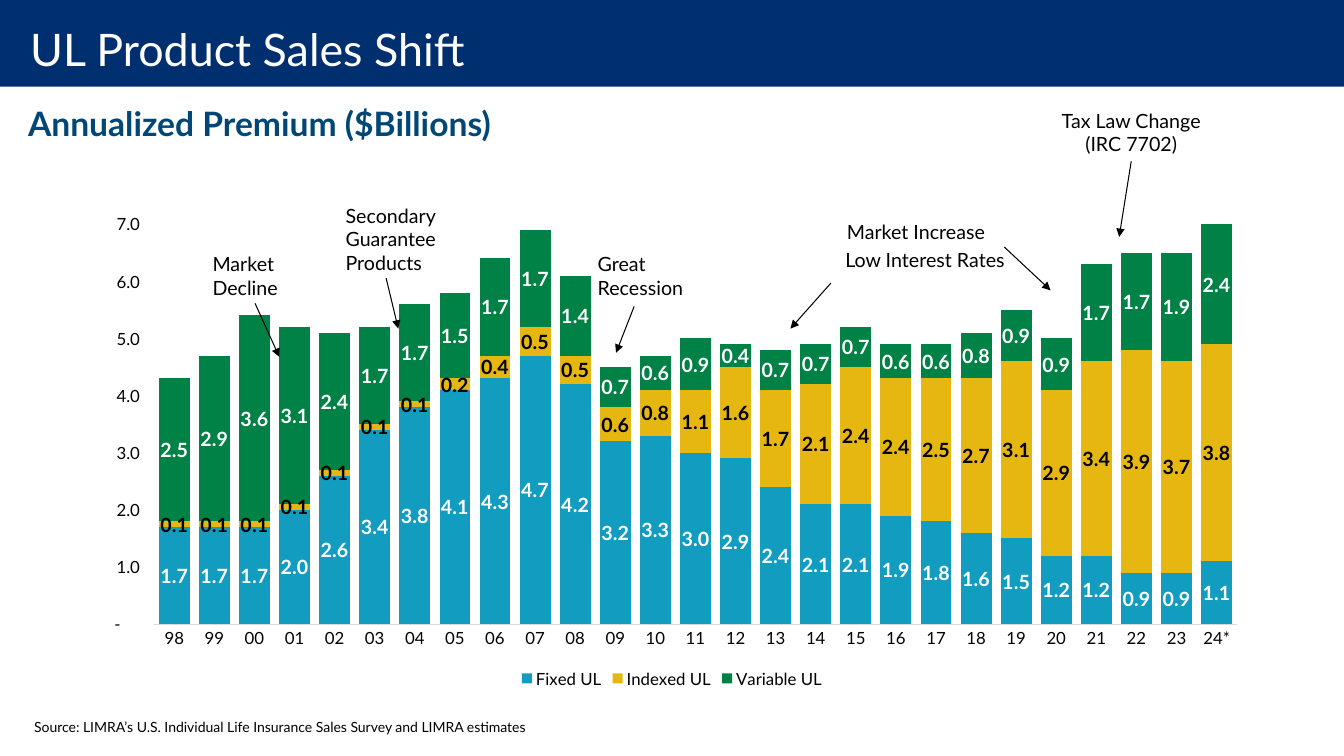
"""Build the UL product sales slide with a stacked column chart and callouts."""
from lxml.etree import SubElement
from pptx import Presentation
from pptx.chart.data import CategoryChartData
from pptx.dml.color import RGBColor
from pptx.enum.chart import XL_CHART_TYPE, XL_LABEL_POSITION, XL_LEGEND_POSITION, XL_TICK_MARK
from pptx.enum.shapes import MSO_CONNECTOR, MSO_SHAPE
from pptx.enum.text import MSO_ANCHOR, MSO_AUTO_SIZE, PP_ALIGN
from pptx.oxml.ns import qn
from pptx.util import Pt

PX = 9144
FONT = "Lato"
COLORS = {
    "band": "002F70", "white": "FFFFFF", "black": "000000", "heading": "004776",
    "axis": "D9D9D9", "fixed": "129DC0", "indexed": "E6B711", "variable": "008145",
}
TITLE = "UL Product Sales Shift"
HEADING = "Annualized Premium ($Billions)"
SOURCE = "Source: LIMRA’s U.S. Individual Life Insurance Sales Survey and LIMRA estimates"
YEARS = [f"{year % 100:02d}" for year in range(1998, 2024)] + ["24*"]
SERIES = [
    ("Fixed UL", "fixed", "white",
     [1.7, 1.7, 1.7, 2.0, 2.6, 3.4, 3.8, 4.1, 4.3, 4.7, 4.2, 3.2, 3.3, 3.0,
      2.9, 2.4, 2.1, 2.1, 1.9, 1.8, 1.6, 1.5, 1.2, 1.2, 0.9, 0.9, 1.1]),
    ("Indexed UL", "indexed", "black",
     [0.1, 0.1, 0.1, 0.1, 0.1, 0.1, 0.1, 0.2, 0.4, 0.5, 0.5, 0.6, 0.8, 1.1,
      1.6, 1.7, 2.1, 2.4, 2.4, 2.5, 2.7, 3.1, 2.9, 3.4, 3.9, 3.7, 3.8]),
    ("Variable UL", "variable", "white",
     [2.5, 2.9, 3.6, 3.1, 2.4, 1.7, 1.7, 1.5, 1.7, 1.7, 1.4, 0.7, 0.6, 0.9,
      0.4, 0.7, 0.7, 0.7, 0.6, 0.6, 0.8, 0.9, 0.9, 1.7, 1.7, 1.9, 2.4]),
]
NUMBER_FORMAT = '_(* #,##0.0_);_(* \\(#,##0.0\\);_(* "-"??_);_(@_)'
CHART_BOX = (83, 203, 1167, 484)
PLOT_LAYOUT = {"x": 0.06, "y": 0.04, "w": 0.92, "h": 0.82}
LEFT, CENTER = PP_ALIGN.LEFT, PP_ALIGN.CENTER
BOTTOM_SITE = 2
CALLOUTS = [
    (["Market Increase"], (807, 213, 203, 34), CENTER, (996, 245), (1042, 288), False),
    (["Low Interest Rates"], (816, 241, 203, 34), CENTER, (824, 281), (784, 326), False),
    (["Great Recession"], (583, 245, 124, 57), LEFT, (629, 304), (611, 350), False),
    (["Secondary Guarantee Products"], (333, 197, 150, 81), LEFT, (383, 276), (395, 326), False),
    (["Market Decline"], (201, 245, 104, 56), LEFT, (253, 301), (277, 354), True),
    (["Tax Law Change", "(IRC 7702)"], (1033, 103, 178, 57), CENTER, (1122, 160), (1110, 235), True),
]


def color(name):
    return RGBColor.from_string(COLORS[name])


def emu(lengths):
    return [length * PX for length in lengths]


def style_font(font, size, name="black", bold=False):
    font.name, font.size, font.bold = FONT, Pt(size), bold
    font.color.rgb = color(name)


def add_text(slide, lines, box, size, name="black", bold=False, align=LEFT):
    textbox = slide.shapes.add_textbox(*emu(box))
    frame = textbox.text_frame
    frame.word_wrap = True
    for index, line in enumerate(lines):
        paragraph = frame.add_paragraph() if index else frame.paragraphs[0]
        paragraph.alignment = align
        run = paragraph.add_run()
        run.text = line
        style_font(run.font, size, name, bold)
    return textbox


def add_arrow(slide, start, end):
    arrow = slide.shapes.add_connector(MSO_CONNECTOR.STRAIGHT, *emu(start + end))
    arrow.line.color.rgb = color("black")
    arrow.line.width = Pt(0.75)
    SubElement(arrow.line._get_or_add_ln(), qn("a:tailEnd"), type="triangle")
    SubElement(arrow.element.spPr, qn("a:effectLst"))
    return arrow


def add_title(slide):
    title = slide.shapes.title
    title.left, title.top, title.width, title.height = emu((0, 0, 1333, 97))
    frame = title.text_frame
    frame.auto_size, frame.word_wrap = MSO_AUTO_SIZE.NONE, False
    frame.vertical_anchor = MSO_ANCHOR.MIDDLE
    frame.margin_left, frame.margin_top, frame.margin_right, frame.margin_bottom = emu((30, 0, 20, 0))
    paragraph = frame.paragraphs[0]
    paragraph.alignment = LEFT
    run = paragraph.add_run()
    run.text = TITLE
    style_font(run.font, 32, "white")
    band = slide.shapes.add_shape(MSO_SHAPE.RECTANGLE, *emu((0, 0, 1333, 86)))
    band.shadow.inherit = False
    band.fill.solid()
    band.fill.fore_color.rgb = color("band")
    band.line.fill.background()
    title.element.addprevious(band.element)


def set_plot_layout(chart):
    plot_area = chart.element.find(".//" + qn("c:plotArea"))
    for old_layout in plot_area.findall(qn("c:layout")):
        plot_area.remove(old_layout)
    layout = SubElement(plot_area, qn("c:layout"))
    plot_area.insert(0, layout)
    manual = SubElement(layout, qn("c:manualLayout"))
    settings = {"layoutTarget": "inner", "xMode": "edge", "yMode": "edge", **PLOT_LAYOUT}
    for tag, value in settings.items():
        SubElement(manual, qn(f"c:{tag}"), val=str(value))


def add_sales_chart(slide):
    sales = CategoryChartData()
    sales.categories = YEARS
    for name, _, _, values in SERIES:
        sales.add_series(name, values)
    chart = slide.shapes.add_chart(XL_CHART_TYPE.COLUMN_STACKED, *emu(CHART_BOX), sales).chart
    chart.has_title = False
    style_font(chart.font, 12)
    chart.has_legend = True
    chart.legend.position = XL_LEGEND_POSITION.BOTTOM
    chart.legend.include_in_layout = False
    style_font(chart.legend.font, 12)

    years, premium = chart.category_axis, chart.value_axis
    years.major_tick_mark = XL_TICK_MARK.NONE
    years.format.line.color.rgb = color("axis")
    years.format.line.width = Pt(0.75)
    premium.minimum_scale, premium.maximum_scale, premium.major_unit = 0, 7, 1
    premium.major_tick_mark = XL_TICK_MARK.OUTSIDE
    premium.has_major_gridlines = False
    premium.format.line.fill.background()
    premium.tick_labels.number_format = NUMBER_FORMAT
    premium.tick_labels.number_format_is_linked = False
    for axis in (years, premium):
        style_font(axis.tick_labels.font, 12)

    plot = chart.plots[0]
    plot.gap_width, plot.overlap, plot.vary_by_categories = 30, 100, False
    for product, (_, fill, label_color, _) in zip(plot.series, SERIES):
        product.format.fill.solid()
        product.format.fill.fore_color.rgb = color(fill)
        product.invert_if_negative = False
        labels = product.data_labels
        labels.show_value = True
        labels.position = XL_LABEL_POSITION.CENTER
        labels.number_format = NUMBER_FORMAT
        labels.number_format_is_linked = False
        style_font(labels.font, 14, label_color, True)
    set_plot_layout(chart)


def main():
    deck = Presentation()
    deck.slide_width, deck.slide_height = emu((1333, 750))
    slide = deck.slides.add_slide(deck.slide_layouts[5])
    add_title(slide)
    add_sales_chart(slide)
    for lines, box, align, start, end, joined in CALLOUTS:
        callout = add_text(slide, lines, box, 14, align=align)
        arrow = add_arrow(slide, start, end)
        if joined:
            arrow.begin_connect(callout, BOTTOM_SITE)
    add_text(slide, [SOURCE], (24, 708, 800, 27), 10)
    add_text(slide, [HEADING], (18, 97, 723, 50), 24, "heading", True)
    deck.save("out.pptx")


if __name__ == "__main__":
    main()
